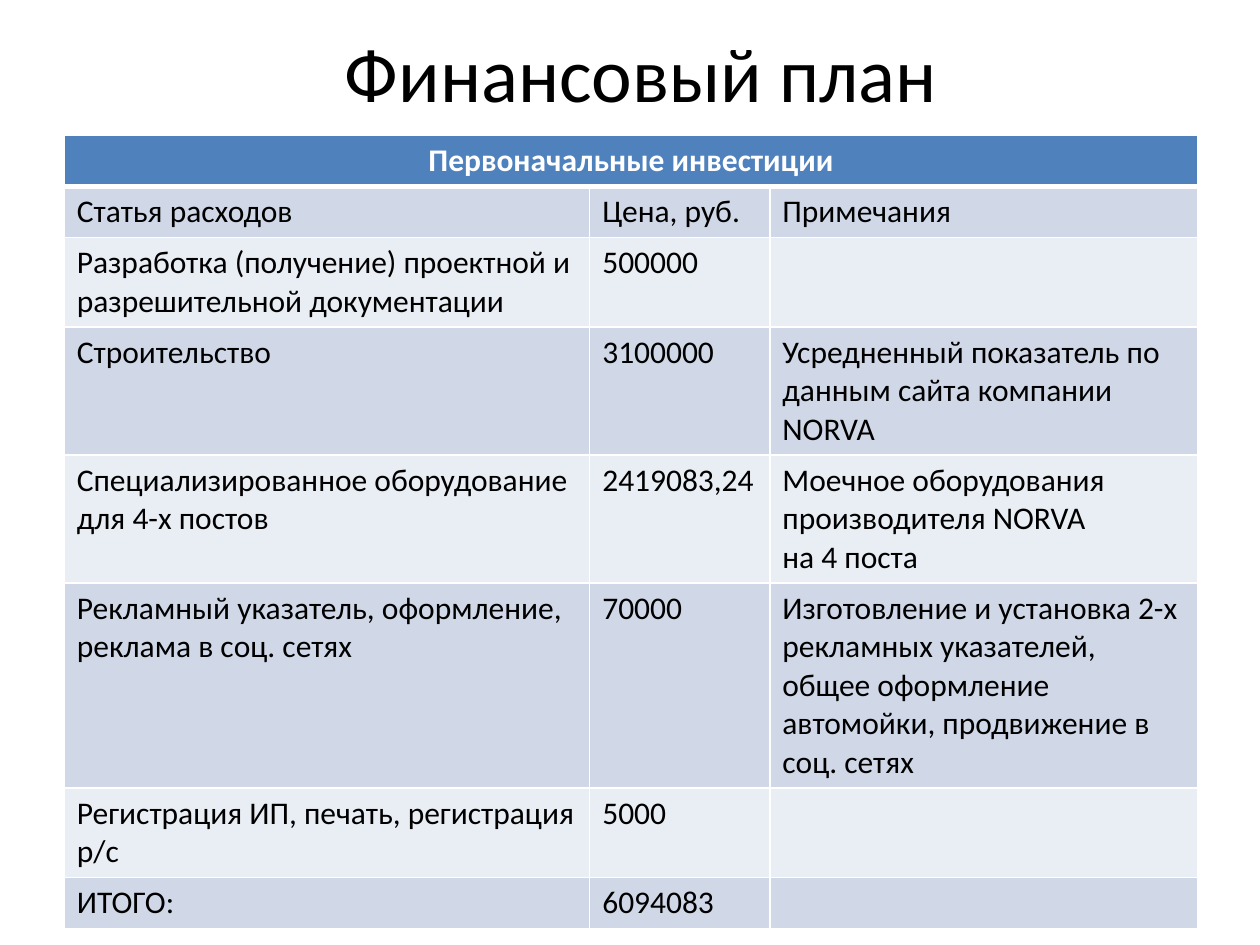
from lxml.etree import SubElement
from pptx import Presentation
from pptx.dml.color import RGBColor
from pptx.enum.text import MSO_ANCHOR, PP_ALIGN
from pptx.oxml.ns import qn
from pptx.util import Pt

# Content
TITLE = "Финансовый план"
HEADING = "Первоначальные инвестиции"
ROWS = [
    ("Статья расходов", "Цена, руб.", "Примечания"),
    ("Разработка (получение) проектной и разрешительной документации", "500000", ""),
    ("Строительство", "3100000",
     "Усредненный показатель по данным сайта компании NORVA"),
    ("Специализированное оборудование для 4-х постов", "2419083,24",
     "Моечное оборудования производителя NORVA\nна 4 поста"),
    ("Рекламный указатель, оформление, реклама в соц. сетях", "70000",
     "Изготовление и установка 2-х рекламных указателей, общее оформление "
     "автомойки, продвижение в соц. сетях"),
    ("Регистрация ИП, печать, регистрация р/с", "5000", ""),
    ("ИТОГО:", "6094083", ""),
]

# Layout, in points
COLUMN_WIDTHS = [300.3, 102.9, 244.8]
ROW_HEIGHTS = [28.1, 28.1, 49, 70.6, 70.6, 112.3, 49, 28.1]

FONT = "Calibri"
BLACK = RGBColor(0x00, 0x00, 0x00)
WHITE = RGBColor(0xFF, 0xFF, 0xFF)
BLUE = RGBColor(0x4F, 0x81, 0xBD)
BANDS = [RGBColor(0xD0, 0xD8, 0xE8), RGBColor(0xE9, 0xED, 0xF4)]


def format_text(frame, size, color, bold=False, align=PP_ALIGN.LEFT):
    for para in frame.paragraphs:
        para.alignment = align
        para.font.size = Pt(size)
        for span in para.runs:
            span.font.name = FONT
            span.font.size = Pt(size)
            span.font.bold = bold
            span.font.color.rgb = color


def add_borders(cell, top=1, bottom=1):
    properties = cell._tc.get_or_add_tcPr()
    for side, width in (("L", 1), ("R", 1), ("T", top), ("B", bottom)):
        line = SubElement(properties, qn(f"a:ln{side}"), w=str(Pt(width)))
        fill = SubElement(line, qn("a:solidFill"))
        SubElement(fill, qn("a:srgbClr"), val=str(WHITE))


def style_cell(cell, fill, top=1, bottom=1):
    add_borders(cell, top, bottom)
    cell.fill.solid()
    cell.fill.fore_color.rgb = fill


deck = Presentation()
deck.slide_width, deck.slide_height = Pt(720), Pt(540)
page = deck.slides.add_slide(deck.slide_layouts[5])

# Title
title = page.shapes.title
title.left, title.top, title.width, title.height = Pt(42.5), Pt(9.4), Pt(648), Pt(62.6)
title.text_frame.text = TITLE
title.text_frame.vertical_anchor = MSO_ANCHOR.MIDDLE
format_text(title.text_frame, 44, BLACK, align=PP_ALIGN.CENTER)

# Table grid
table = page.shapes.add_table(
    len(ROW_HEIGHTS), len(COLUMN_WIDTHS), Pt(36.7), Pt(77.3),
    Pt(sum(COLUMN_WIDTHS)), Pt(sum(ROW_HEIGHTS))).table
for column, width in zip(table.columns, COLUMN_WIDTHS):
    column.width = Pt(width)
for row, height in zip(table.rows, ROW_HEIGHTS):
    row.height = Pt(height)

# Heading across all columns
heading = table.cell(0, 0)
heading.merge(table.cell(0, len(COLUMN_WIDTHS) - 1))
heading.text_frame.text = HEADING
format_text(heading.text_frame, 18, WHITE, bold=True, align=PP_ALIGN.CENTER)
for cell in table.rows[0].cells:
    style_cell(cell, BLUE, bottom=3)

# Banded rows
for index, texts in enumerate(ROWS):
    for cell, text in zip(table.rows[index + 1].cells, texts):
        cell.text_frame.text = text
        format_text(cell.text_frame, 18, BLACK)
        style_cell(cell, BANDS[index % 2], top=3 if index == 0 else 1)

deck.save("out.pptx")
